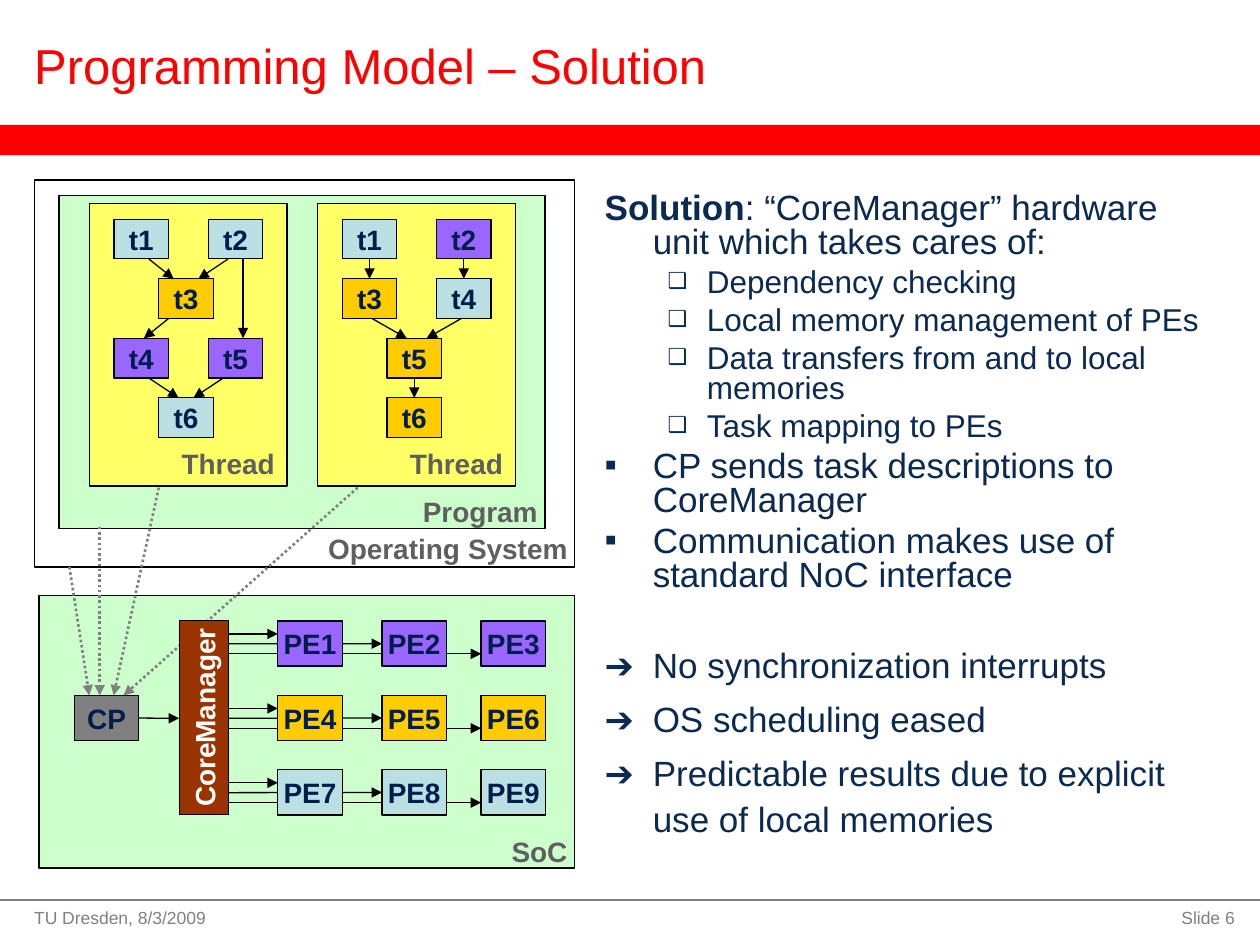
"""Build the slide on the CoreManager programming model."""
from lxml import etree
from pptx import Presentation
from pptx.dml.color import RGBColor
from pptx.enum import dml, shapes, text
from pptx.oxml import ns
from pptx.util import Cm, Pt

rgb = RGBColor.from_string
LEFT, MID, RIGHT = text.PP_ALIGN.LEFT, text.PP_ALIGN.CENTER, text.PP_ALIGN.RIGHT
TOP, HALF, LOW = text.MSO_ANCHOR.TOP, text.MSO_ANCHOR.MIDDLE, text.MSO_ANCHOR.BOTTOM
NAVY, GRAY, DARK, GREEN = "001D4B", "808080", "5F5F5F", "CCFFCC"
BLUE, GOLD, LILAC = "BBE0E3", "FFCC00", "9966FF"

deck = Presentation()
deck.slide_width, deck.slide_height = Cm(25.4), Cm(19.05)
slide = deck.slides.add_slide(deck.slide_layouts[5])


def box(words, x, y, w, h, fill=None, edge="000000", size=16, color=NAVY,
        bold=True, align=MID, anchor=HALF, pad=(0, 0, 0, 0)):
    place = [Cm(n) for n in (x, y, w, h)]
    if fill:
        item = slide.shapes.add_shape(shapes.MSO_SHAPE.RECTANGLE, *place)
        item.shadow.inherit = False
        item.fill.solid()
        item.fill.fore_color.rgb = rgb(fill)
        if edge:
            item.line.color.rgb = rgb(edge)
            item.line.width = Pt(0.75)
        else:
            item.line.fill.background()
    else:
        item = slide.shapes.add_textbox(*place)
    frame = item.text_frame
    frame.word_wrap = not fill
    frame.vertical_anchor = anchor
    frame.margin_left, frame.margin_top, frame.margin_right, frame.margin_bottom = map(Cm, pad)
    para = frame.paragraphs[0]
    para.alignment = align
    if words:
        run = para.add_run()
        run.text = words
        run.font.name, run.font.size, run.font.bold = "Arial", Pt(size), bold
        run.font.color.rgb = rgb(color)
    return item


def wire(x1, y1, x2, y2, color="000000", width=0.75, dots=False, head=True):
    item = slide.shapes.add_connector(
        shapes.MSO_CONNECTOR.STRAIGHT, Cm(x1), Cm(y1), Cm(x2), Cm(y2))
    item.line.color.rgb = rgb(color)
    item.line.width = Pt(width)
    if dots:
        item.line.dash_style = dml.MSO_LINE.ROUND_DOT
    if head:
        etree.SubElement(item.line._get_or_add_ln(), ns.qn("a:tailEnd"), type="triangle")
    etree.SubElement(item._element.spPr, ns.qn("a:effectLst"))
    return item


box("", 0, 2.52, 25.4, 0.61, fill="FF0000", edge=None)
wire(0, 18.14, 25.4, 18.14, color=GRAY, head=False)
foot = dict(size=10, color=GRAY, bold=False, anchor=TOP)
box("TU Dresden, 8/3/2009", 0.69, 18.29, 5.72, 0.74, align=LEFT, **foot)
box("Slide 6", 19.61, 18.29, 5.28, 0.64, align=RIGHT, **foot)

title = slide.shapes.title
title.left, title.top, title.width, title.height = Cm(0.69), Cm(0.41), Cm(19.3), Cm(1.8)
frame = title.text_frame
frame.text = "Programming Model – Solution"
frame.auto_size = text.MSO_AUTO_SIZE.NONE
frame.vertical_anchor = HALF
frame.margin_left = 0
para = frame.paragraphs[0]
para.alignment = LEFT
para.font.name, para.font.size = "Arial", Pt(28)
para.font.color.rgb = rgb("FF0000")

body = box("", 12.19, 3.78, 12.5, 13.9, align=LEFT, anchor=TOP, pad=(0, 0.13, 0.25, 0.13))
lines = [
    ("Solution", "", 0.8, 0),
    ("Dependency checking", "❑", 0.8, 4.5),
    ("Local memory management of PEs", "❑", 0.8, 4.5),
    ("Data transfers from and to local memories", "❑", 0.8, 4.5),
    ("Task mapping to PEs", "❑", 0.8, 4.5),
    ("CP sends task descriptions to CoreManager", "▪", 0.8, 4.5),
    ("Communication makes use of standard NoC interface", "▪", 0.8, 4.5),
    ("➔\tNo synchronization interrupts", "", 1.0, 28),
    ("➔\tOS scheduling eased", "", 1.1, 4.5),
    ("➔\tPredictable results due to explicit use of local memories", "", 1.1, 4.5),
]
for i, (words, mark, gap, before) in enumerate(lines):
    para = body.text_frame.paragraphs[0] if i == 0 else body.text_frame.add_paragraph()
    sub = mark == "❑"
    props = para._p.get_or_add_pPr()
    props.set("marL", str(Cm(2.06 if sub else 0.97)))
    props.set("indent", str(-Cm(0.79 if sub else 0.97)))
    if sub:
        props.set("lvl", "1")
        etree.SubElement(props, ns.qn("a:buSzPct"), val="70000")
    if mark:
        etree.SubElement(props, ns.qn("a:buFont"), typeface="Arial")
        etree.SubElement(props, ns.qn("a:buChar"), char=mark)
    para.line_spacing, para.space_before = gap, Pt(before)
    para.font.name, para.font.size = "Arial", Pt(18 if sub else 20)
    para.font.color.rgb = rgb("0B2A51")
    para.add_run().text = words
    if i == 0:
        para.runs[0].font.bold = True
        para.add_run().text = ": “CoreManager” hardware unit which takes cares of:"

label = dict(color=DARK, align=RIGHT, anchor=LOW)
system = box("Operating", 0.69, 3.63, 10.9, 7.8, fill="FFFFFF", pad=(0, 0.13, 0.15, 0), **label)
for words, name, size, bold, color in ((" ", "Roboto Condensed", 20, False, NAVY),
                                       ("System", "Arial", 16, True, DARK)):
    run = system.text_frame.paragraphs[0].add_run()
    run.text = words
    run.font.name, run.font.size, run.font.bold = name, Pt(size), bold
    run.font.color.rgb = rgb(color)
box("SoC", 0.79, 12.01, 10.8, 5.49, fill=GREEN, pad=(0, 0, 0.15, 0), **label)
box("Program", 1.19, 3.94, 9.8, 6.71, fill=GREEN, pad=(0, 0, 0.15, 0), **label)

graphs = [
    (1.8,
     [("t1", 0.5, 0, BLUE), ("t2", 2.4, 0, BLUE), ("t3", 1.4, 1, GOLD),
      ("t4", 0.5, 2, LILAC), ("t5", 2.4, 2, LILAC), ("t6", 1.4, 3, BLUE)],
     [(1.2, 0, 1.7, 1), (2.8, 0, 2.2, 1), (3.1, 0, 3.1, 2),
      (1.6, 1, 1.1, 2), (1.2, 2, 1.8, 3), (2.7, 2, 2.1, 3)],
     []),
    (6.4,
     [("t1", 0.5, 0, BLUE), ("t2", 2.4, 0, LILAC), ("t3", 0.5, 1, GOLD),
      ("t4", 2.4, 1, BLUE), ("t5", 1.4, 2, GOLD), ("t6", 1.4, 3, GOLD)],
     [(2.9, 1, 2.2, 2), (1.1, 1, 1.8, 2)],
     [("t1", "t3"), ("t2", "t4"), ("t5", "t6")]),
]
first, step, tall = 4.42, 1.2, 0.8
for left, tasks, slants, joins in graphs:
    box("Thread", left, 4.11, 3.99, 5.69, fill="FFFF66", pad=(0, 0.13, 0.25, 0.13), **label)
    made = {name: box(name, left + x, first + step * row, 1.1, tall, fill=fill)
            for name, x, row, fill in tasks}
    for x1, row, x2, goal in slants:
        wire(left + x1, first + step * row + tall, left + x2, first + step * goal)
    for start, end in joins:
        link = wire(0, 0, 0, 0)
        link.begin_connect(made[start], 2)
        link.end_connect(made[end], 0)

chip = box("CP", 1.5, 14.02, 1.3, 0.91, fill=GRAY)
wire(2.8, 14.48, 3.61, 14.48).begin_connect(chip, 3)

cols = (5.6, 7.7, 9.7)
for row, fill in enumerate((LILAC, GOLD, BLUE)):
    top = 12.52 + 1.5 * row
    feeds = [wire(4.6, top + 0.26 + 0.2 * k, x, top + 0.26 + 0.2 * k)
             for k, x in enumerate(cols)]
    cores = [box(f"PE{3 * row + k + 1}", x, top, 1.3, 0.91, fill=fill)
             for k, x in enumerate(cols)]
    feeds[1].end_connect(cores[1], 1)

for x1, y1, x2 in ((3.2, 9.83, 2.29), (7.21, 9.83, 2.49), (1.4, 11.43, 1.8), (2.01, 10.62, 2.01)):
    wire(x1, y1, x2, 14.02, color=GRAY, width=1.5, dots=True)
box("CoreManager", 2.16, 13.97, 3.91, 0.99, fill="993300", color="FFFFFF").rotation = 270

deck.save("out.pptx")
